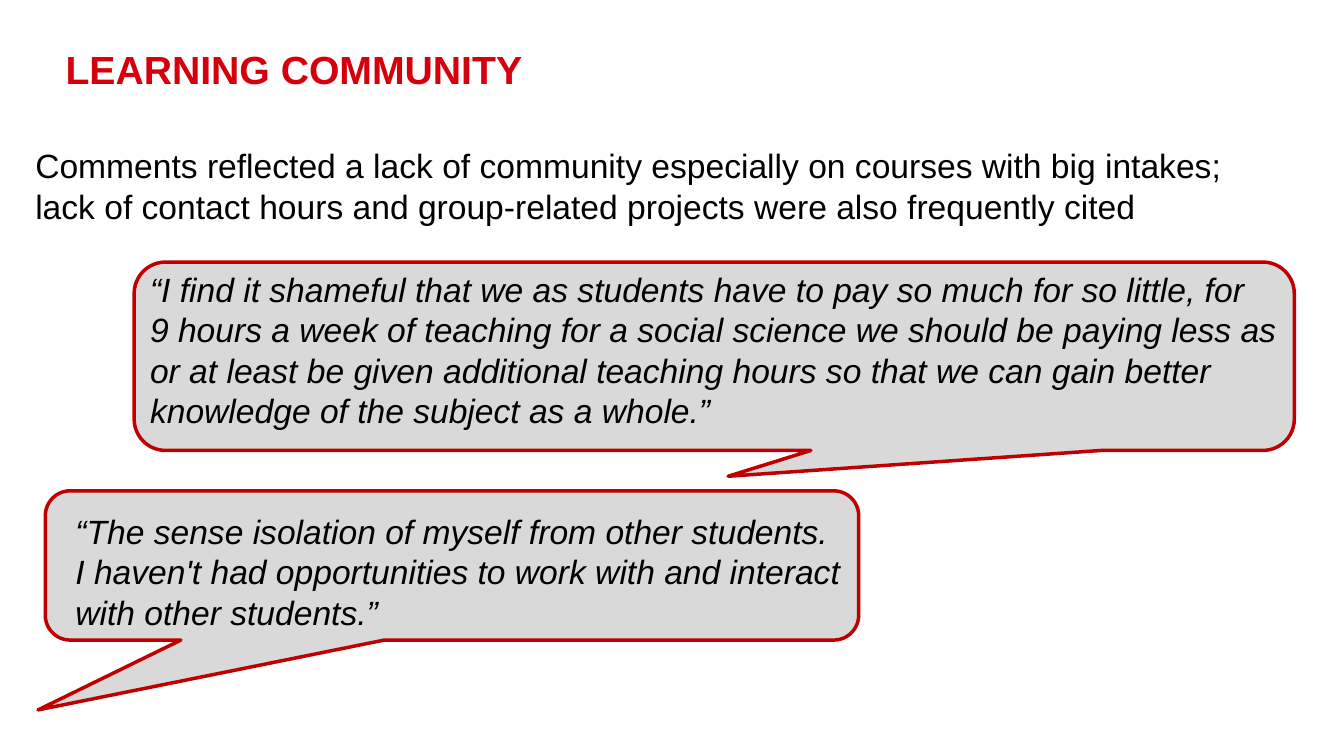
from dataclasses import dataclass

from pptx import Presentation
from pptx.dml.color import RGBColor
from pptx.enum.shapes import MSO_SHAPE
from pptx.enum.text import MSO_ANCHOR, MSO_AUTO_SIZE, PP_ALIGN
from pptx.oxml.xmlchemy import OxmlElement
from pptx.shapes.autoshape import Shape
from pptx.slide import Slide
from pptx.text.text import TextFrame
from pptx.util import Pt

FONT = "Arial"
RED = RGBColor(0xD6, 0x00, 0x0D)
BLACK = RGBColor(0x00, 0x00, 0x00)
GREY = RGBColor(0xD9, 0xD9, 0xD9)
DARK_RED = RGBColor(0xC0, 0x00, 0x00)


@dataclass(frozen=True)
class Box:
    left: float
    top: float
    width: float
    height: float

    def lengths(self) -> tuple[Pt, Pt, Pt, Pt]:
        return Pt(self.left), Pt(self.top), Pt(self.width), Pt(self.height)


@dataclass(frozen=True)
class Quote:
    bubble: Box
    tail: tuple[float, float]
    text: Box
    lines: list[str]


QUOTES = [
    Quote(
        Box(32.4, 350.6, 581, 106.6), (-0.509, 0.968), Box(46.8, 361.4, 566.6, 113.8),
        ["“The sense isolation of myself from other students.",
         "I haven't had opportunities to work with and interact",
         "with other students.”"],
    ),
    Quote(
        Box(95.8, 187.2, 828.7, 134.6), (0.012, 0.637), Box(100.1, 188.6, 833.8, 143.3),
        ["“I find it shameful that we as students have to pay so much for so little, for",
         "9 hours a week of teaching for a social science we should be paying less as",
         "or at least be given additional teaching hours so that we can gain better",
         "knowledge of the subject as a whole.”"],
    ),
]


def write_lines(tf: TextFrame, lines: list[str], size: float, color: RGBColor,
                bold: bool = False, italic: bool = False, spacing: float = 1.0) -> None:
    for i, line in enumerate(lines):
        p = tf.paragraphs[0] if i == 0 else tf.add_paragraph()
        p.alignment = PP_ALIGN.LEFT
        p.line_spacing = spacing
        p.space_before = Pt(0)
        r = p.add_run()
        r.text = line
        r.font.name = FONT
        r.font.size = Pt(size)
        r.font.bold = bold
        r.font.italic = italic
        r.font.color.rgb = color


def place(sp: Shape, box: Box) -> TextFrame:
    sp.left, sp.top, sp.width, sp.height = box.lengths()
    tf = sp.text_frame
    tf.word_wrap = True
    tf.auto_size = MSO_AUTO_SIZE.NONE
    tf.vertical_anchor = MSO_ANCHOR.TOP
    return tf


def remove_bullet(tf: TextFrame) -> None:
    pPr = tf.paragraphs[0]._p.get_or_add_pPr()
    pPr.set("marL", "0")
    pPr.set("indent", "0")
    pPr.append(OxmlElement("a:buNone"))


def add_quote(s: Slide, quote: Quote) -> None:
    sp = s.shapes.add_shape(MSO_SHAPE.ROUNDED_RECTANGULAR_CALLOUT, *quote.bubble.lengths())
    sp.shadow.inherit = False
    sp.adjustments[0], sp.adjustments[1] = quote.tail
    sp.fill.solid()
    sp.fill.fore_color.rgb = GREY
    sp.line.color.rgb = DARK_RED
    sp.line.width = Pt(2.5)

    tf = s.shapes.add_textbox(*quote.text.lengths()).text_frame
    tf.word_wrap = False
    write_lines(tf, quote.lines, 24, BLACK, italic=True)


def main() -> None:
    prs = Presentation()
    prs.slide_width, prs.slide_height = Pt(960), Pt(540)
    s = prs.slides.add_slide(prs.slide_layouts[1])

    # Title
    tf = place(s.shapes.title, Box(39.6, 32.4, 822.2, 78.5))
    write_lines(tf, ["LEARNING COMMUNITY"], 28, RED, bold=True, spacing=0.9)

    # Summary
    tf = place(s.placeholders[1], Box(18, 100.1, 897.1, 252.7))
    remove_bullet(tf)
    write_lines(tf, ["Comments reflected a lack of community especially on courses with big "
                     "intakes; lack of contact hours and group-related projects were also "
                     "frequently cited"], 24, BLACK)

    # Student quotes
    for quote in QUOTES:
        add_quote(s, quote)

    prs.save("out.pptx")


if __name__ == "__main__":
    main()
